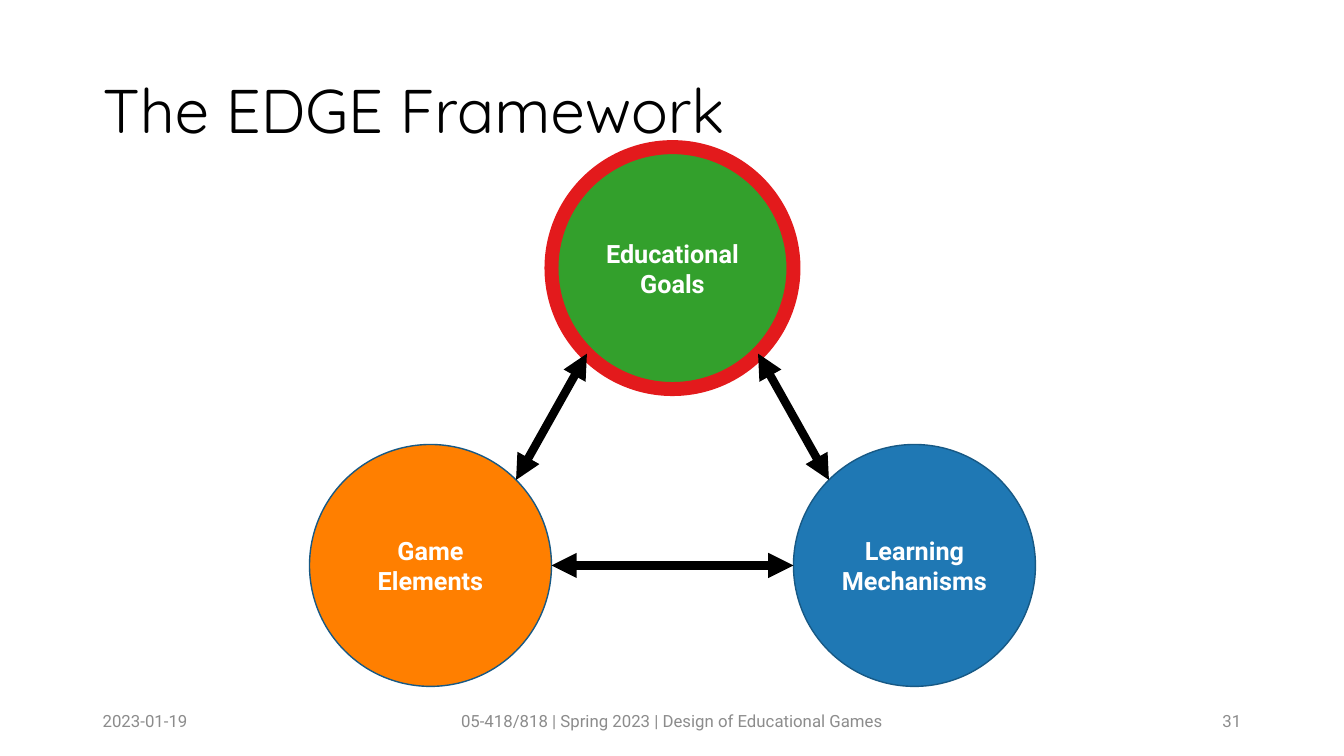
from math import sqrt

from lxml import etree
from pptx import Presentation
from pptx.dml.color import RGBColor
from pptx.enum.shapes import MSO_CONNECTOR, MSO_SHAPE
from pptx.enum.text import MSO_ANCHOR, PP_ALIGN
from pptx.oxml.ns import qn
from pptx.util import Inches, Pt

LEFT, MID, RIGHT = PP_ALIGN.LEFT, PP_ALIGN.CENTER, PP_ALIGN.RIGHT
MIDDLE = MSO_ANCHOR.MIDDLE
OVAL = MSO_SHAPE.OVAL
STRAIGHT = MSO_CONNECTOR.STRAIGHT

WIDE, HIGH = 13.33, 7.5
EDGE = 0.92
COLORS = {
    "black": "000000", "white": "FFFFFF", "gray": "8C8C8C",
    "green": "33A02C", "red": "E31A1C", "orange": "FF7F00",
    "blue": "1F78B4", "navy": "175985",
}
STYLES = {
    "title": {"size": Pt(44), "name": "Quicksand", "color": "black"},
    "node": {"size": Pt(18), "name": "Roboto", "bold": True, "color": "white"},
    "foot": {"size": Pt(12), "name": "Roboto", "color": "gray"},
}


def rgb(name):
    return RGBColor.from_string(COLORS[name])


def write(shape, text, style, align):
    frame = shape.text_frame
    frame.word_wrap = True
    frame.vertical_anchor = MIDDLE
    para = frame.paragraphs[0]
    para.alignment = align
    run = para.add_run()
    run.text = text
    for key, value in STYLES[style].items():
        if key == "color":
            run.font.color.rgb = rgb(value)
        else:
            setattr(run.font, key, value)
    return para


def add_text(slide, box, text, style, align=LEFT):
    shape = slide.shapes.add_textbox(*map(Inches, box))
    return write(shape, text, style, align)


def add_title(slide, box):
    add_text(slide, box, "The EDGE Framework", "title").line_spacing = 0.9


def add_node(slide, center, size, text, fill, line, width):
    x, y = center
    box = (x - size / 2, y - size / 2, size, size)
    node = slide.shapes.add_shape(OVAL, *map(Inches, box))
    node.shadow.inherit = False
    node.fill.solid()
    node.fill.fore_color.rgb = rgb(fill)
    node.line.color.rgb = rgb(line)
    node.line.width = Pt(width)
    write(node, text, "node", MID)


def add_arrow(slide, start, end):
    arrow = slide.shapes.add_connector(STRAIGHT, *map(Inches, start + end))
    arrow.line.color.rgb = rgb("black")
    arrow.line.width = Pt(6)
    props = arrow.line._get_or_add_ln()
    for tag in ("a:headEnd", "a:tailEnd"):
        etree.SubElement(props, qn(tag), type="triangle")
    etree.SubElement(arrow._element.spPr, qn("a:effectLst"))


def add_cycle(slide, box):
    """Three circles, one above two, joined by double arrows; three sizes wide."""
    left, top, width, height = box
    size = width / 3
    rad = size / 2
    diag = rad / sqrt(2)
    mid, high, low = left + width / 2, top + rad, top + height - rad
    goal, game, learn = (mid, high), (left + rad, low), (left + width - rad, low)

    add_node(slide, goal, size, "Educational Goals", "green", "red", 10)
    add_node(slide, learn, size, "Learning Mechanisms", "blue", "navy", 1)
    add_node(slide, game, size, "Game Elements", "orange", "navy", 1)

    add_arrow(slide, (game[0] + rad, low), (learn[0] - rad, low))
    for side, (x, y) in ((-1, game), (1, learn)):
        add_arrow(slide, (mid + side * diag, high + diag),
                  (x - side * diag, y - diag))


def add_footer(slide, box):
    left, top, width, height = box
    side, core = 3, 4.5
    parts = (
        (left, side, "2023-01-19", LEFT),
        (left + (width - core) / 2, core,
         "05-418/818 | Spring 2023 | Design of Educational Games", MID),
        (left + width - side, side, "31", RIGHT),
    )
    for x, span, text, align in parts:
        add_text(slide, (x, top, span, height), text, "foot", align)


def main():
    deck = Presentation()
    deck.slide_width, deck.slide_height = Inches(WIDE), Inches(HIGH)
    slide = deck.slides.add_slide(deck.slide_layouts[6])
    span = WIDE - 2 * EDGE
    add_title(slide, (EDGE, 0.4, span, 1.45))
    add_cycle(slide, (3.07, 1.46, 7.2, 5.35))
    add_footer(slide, (EDGE, 6.95, span, 0.4))
    deck.save("out.pptx")


if __name__ == "__main__":
    main()
